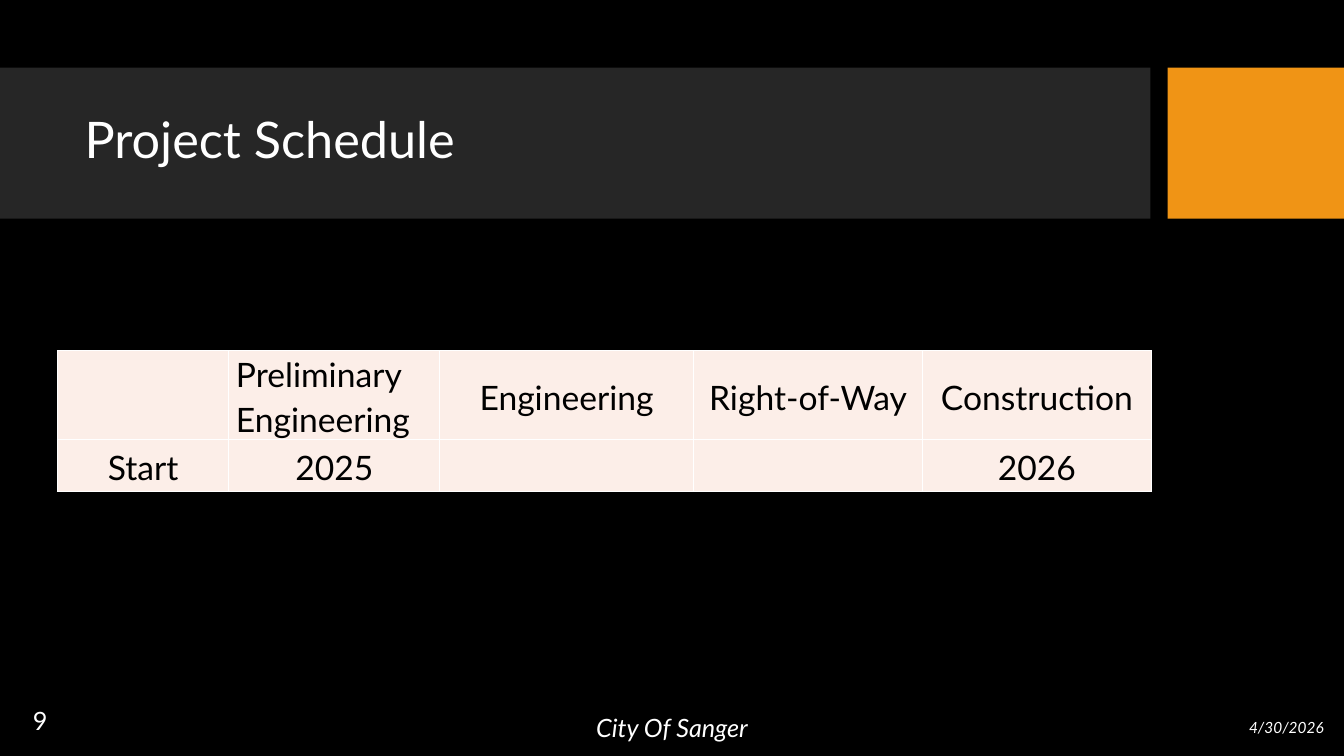
import pptx
import pptx.util
import pptx.dml.color
import pptx.enum.shapes
import pptx.enum.text
import pptx.oxml
import pptx.oxml.ns
from dataclasses import dataclass

Inches = pptx.util.Inches
Align = pptx.enum.text.PP_ALIGN
Anchor = pptx.enum.text.MSO_ANCHOR


@dataclass(frozen=True)
class Theme:
    font: str = "Lato"
    back: str = "000000"
    band: str = "262626"
    accent: str = "F09415"
    cell: str = "FCEEE8"
    light: str = "FFFFFF"
    dark: str = "000000"
    title: int = 36
    body: int = 24
    foot: int = 18
    date: int = 11


THEME = Theme()
WIDTHS = (1.7, 2.09, 2.52, 2.27, 2.27)
HEIGHTS = (0.88, 0.52)
ROWS = (
    ("", "Preliminary Engineering", "Engineering", "Right-of-Way", "Construction"),
    ("Start", "2025", "", "", "2026"),
)


def paint(fill, color):
    fill.solid()
    fill.fore_color.rgb = pptx.dml.color.RGBColor.from_string(color)


def write(frame, text, size, color=THEME.light, align=Align.LEFT,
          italic=False, spacing=1.0):
    frame.word_wrap = True
    par = frame.paragraphs[0]
    par.alignment = align
    par.line_spacing = spacing
    run = par.add_run()
    run.text = text
    font = run.font
    font.name = THEME.font
    font.size = pptx.util.Pt(size)
    font.bold = False
    font.italic = italic
    font.color.rgb = pptx.dml.color.RGBColor.from_string(color)


def label(slide, box, text, size, inset=0.1, **style):
    frame = slide.shapes.add_textbox(*map(Inches, box)).text_frame
    frame.vertical_anchor = Anchor.MIDDLE
    frame.margin_left = frame.margin_right = Inches(inset)
    write(frame, text, size, **style)


def block(slide, box, color):
    shape = slide.shapes.add_shape(
        pptx.enum.shapes.MSO_SHAPE.RECTANGLE, *map(Inches, box))
    shape.shadow.inherit = False
    paint(shape.fill, color)
    shape.line.fill.background()
    return shape


def header(slide, box):
    left, top, width, height = box
    accent, gap = 1.75, 0.17
    band = width - accent - gap
    block(slide, (left, top, band, height), THEME.band)
    block(slide, (left + width - accent, top, accent, height), THEME.accent)
    label(slide, (left + 0.74, top + 0.15, band - 0.9, 1.18),
          "Project Schedule", THEME.title, spacing=0.9)


def border(cell):
    """Draw a thin line on all four sides of the cell."""
    props = cell._tc.get_or_add_tcPr()
    for place, side in enumerate("LRTB"):
        props.insert(place, pptx.oxml.parse_xml(
            f'<a:ln{side} {pptx.oxml.ns.nsdecls("a")} w="12700"><a:solidFill>'
            f'<a:srgbClr val="{THEME.light}"/></a:solidFill></a:ln{side}>'))


def schedule(slide, left, top):
    grid = slide.shapes.add_table(
        len(ROWS), len(WIDTHS), Inches(left), Inches(top),
        Inches(sum(WIDTHS)), Inches(sum(HEIGHTS))).table
    grid.first_row = grid.horz_banding = False
    for col, width in zip(grid.columns, WIDTHS):
        col.width = Inches(width)
    for row, height, texts in zip(grid.rows, HEIGHTS, ROWS):
        row.height = Inches(height)
        for cell, text in zip(row.cells, texts):
            paint(cell.fill, THEME.cell)
            border(cell)
            cell.vertical_anchor = Anchor.MIDDLE
            cell.margin_left = cell.margin_right = Inches(0.07)
            cell.margin_top = cell.margin_bottom = 0
            if text:
                align = Align.LEFT if " " in text else Align.CENTER
                write(cell.text_frame, text, THEME.body, color=THEME.dark,
                      align=align, spacing=1.1)


def footer(slide, box):
    left, top, width, height = box
    bar = block(slide, box, THEME.back)
    bar.text_frame.vertical_anchor = Anchor.MIDDLE
    write(bar.text_frame, "City Of Sanger", THEME.foot,
          align=Align.CENTER, italic=True)
    label(slide, (left + width - 3.1, top + 0.09, 3, 0.4), "4/30/2026",
          THEME.date, align=Align.RIGHT, italic=True)
    label(slide, (left + 0.05, top - 0.13, 0.7, 0.7), "9",
          THEME.foot, inset=0, align=Align.CENTER)


def main():
    deck = pptx.Presentation()
    deck.slide_width, deck.slide_height = Inches(13.33), Inches(7.5)
    slide = deck.slides.add_slide(deck.slide_layouts[6])
    paint(slide.background.fill, THEME.back)
    header(slide, (0, 0.67, 13.33, 1.5))
    footer(slide, (0, 6.93, 13.33, 0.57))
    schedule(slide, 0.57, 3.48)
    deck.save("out.pptx")


if __name__ == "__main__":
    main()
